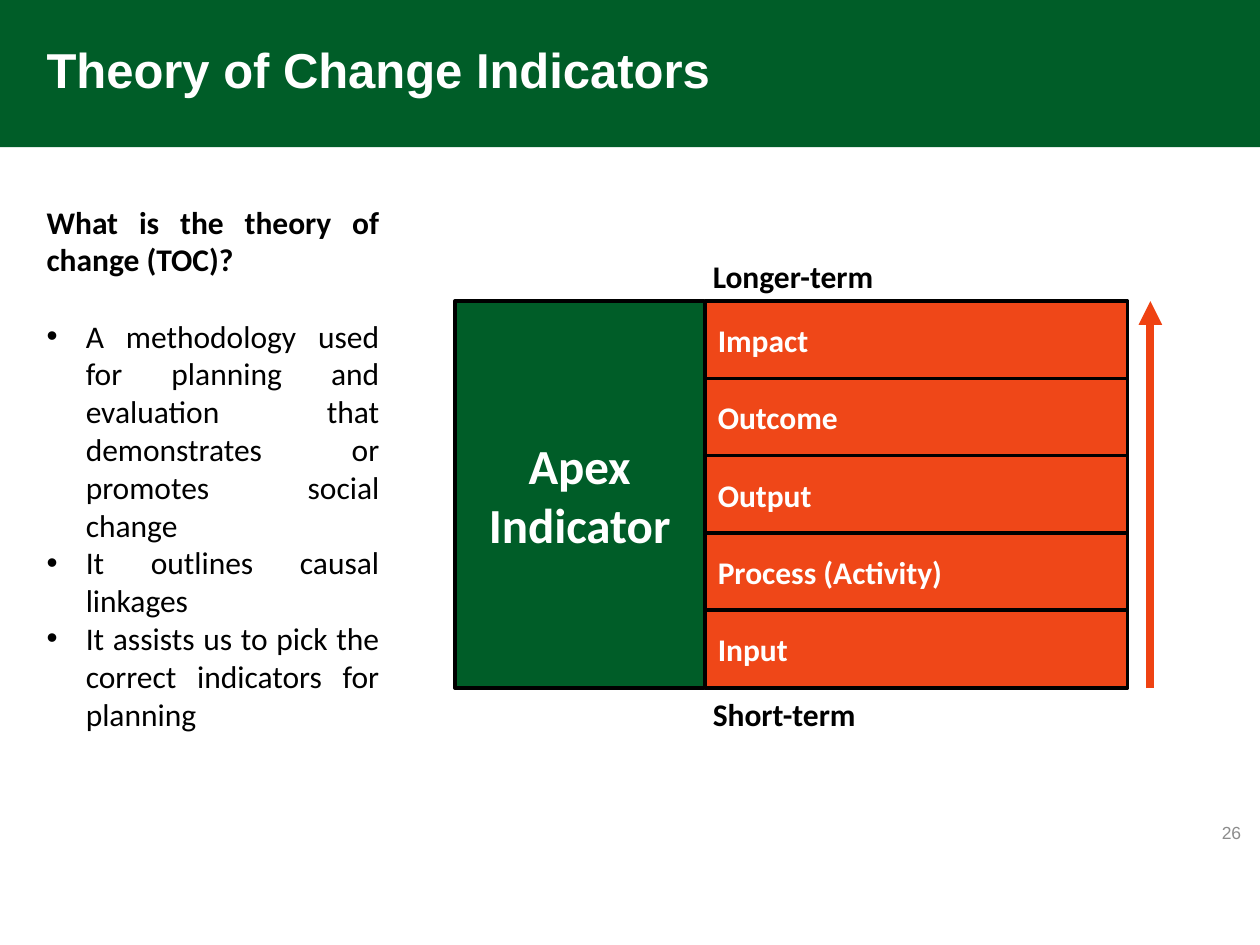
"""Build the Theory of Change Indicators slide."""
from dataclasses import dataclass

from lxml import etree
from pptx import Presentation
from pptx import util as u
from pptx.dml.color import RGBColor
from pptx.enum import shapes, text
from pptx.oxml import ns


@dataclass(frozen=True)
class Theme:
    green: str = "005D28"
    orange: str = "EF4718"
    arrow: str = "EF4212"
    white: str = "FFFFFF"
    black: str = "000000"
    gray: str = "8C8C8C"
    heading_font: str = "Arial"
    body_font: str = "Calibri"
    large: int = 28
    body: int = 18
    small: int = 10
    outline: float = 2
    arrow_width: float = 4.5


@dataclass(frozen=True)
class Box:
    left: float
    top: float
    width: float
    height: float

    def lengths(self) -> tuple:
        return tuple(u.Cm(value) for value in (self.left, self.top, self.width, self.height))


@dataclass(frozen=True)
class Style:
    size: int
    color: str
    bold: bool = True
    font: str = "Calibri"
    align: text.PP_ALIGN = text.PP_ALIGN.LEFT


THEME = Theme()
TITLE = Style(THEME.large, THEME.white, font=THEME.heading_font)
NUMBER = Style(THEME.small, THEME.gray, False, THEME.heading_font, text.PP_ALIGN.RIGHT)
APEX = Style(THEME.large, THEME.white, align=text.PP_ALIGN.CENTER)
LEVEL = Style(THEME.body, THEME.white)
TERM = Style(THEME.body, THEME.black)
QUESTION = Style(THEME.body, THEME.black, align=text.PP_ALIGN.JUSTIFY)
ANSWER = Style(THEME.body, THEME.black, False, align=text.PP_ALIGN.JUSTIFY)

LEVELS = ("Impact", "Outcome", "Output", "Process (Activity)", "Input")
ANSWERS = (
    "A methodology used for planning and evaluation that demonstrates or promotes social change",
    "It outlines causal linkages",
    "It assists us to pick the correct indicators for planning",
)
APEX_BOX = Box(9.17, 6.07, 5.03, 7.8)
LEVEL_LEFT, LEVEL_WIDTH, LEVEL_HEIGHT = 14.22, 8.51, 1.57
ARROW_LEFT = 23.19
BULLET_INDENT = u.Cm(0.79)


def add_run(paragraph, words: str, style: Style) -> None:
    paragraph.alignment = style.align
    run = paragraph.add_run()
    run.text = words
    run.font.name = style.font
    run.font.size = u.Pt(style.size)
    run.font.bold = style.bold
    run.font.color.rgb = RGBColor.from_string(style.color)


def add_bullet(paragraph) -> None:
    properties = paragraph._p.get_or_add_pPr()
    properties.set("marL", str(BULLET_INDENT))
    properties.set("indent", str(-BULLET_INDENT))
    etree.SubElement(properties, ns.qn("a:buFont")).set("typeface", THEME.heading_font)
    etree.SubElement(properties, ns.qn("a:buChar")).set("char", "•")


def add_label(slide, box: Box, words: str, style: Style, anchor=text.MSO_ANCHOR.TOP):
    frame = slide.shapes.add_textbox(*box.lengths()).text_frame
    frame.word_wrap = True
    frame.vertical_anchor = anchor
    add_run(frame.paragraphs[0], words, style)
    return frame


def add_block(slide, box: Box, fill: str, outlined: bool = True):
    shape = slide.shapes.add_shape(shapes.MSO_SHAPE.RECTANGLE, *box.lengths())
    shape.shadow.inherit = False
    shape.fill.solid()
    shape.fill.fore_color.rgb = RGBColor.from_string(fill)
    if outlined:
        shape.line.color.rgb = RGBColor.from_string(THEME.black)
        shape.line.width = u.Pt(THEME.outline)
    else:
        shape.line.fill.background()
    return shape


def add_text_block(slide, box: Box, fill: str, words: str, style: Style) -> None:
    frame = add_block(slide, box, fill).text_frame
    frame.word_wrap = True
    frame.vertical_anchor = text.MSO_ANCHOR.MIDDLE
    add_run(frame.paragraphs[0], words, style)


def add_up_arrow(slide, left: float, bottom: float, top: float) -> None:
    arrow = slide.shapes.add_connector(
        shapes.MSO_CONNECTOR.STRAIGHT, u.Cm(left), u.Cm(bottom), u.Cm(left), u.Cm(top)
    )
    arrow.line.color.rgb = RGBColor.from_string(THEME.arrow)
    arrow.line.width = u.Pt(THEME.arrow_width)
    etree.SubElement(arrow.line._get_or_add_ln(), ns.qn("a:tailEnd")).set("type", "triangle")
    etree.SubElement(arrow._element.spPr, ns.qn("a:effectLst"))


def add_explanation(slide) -> None:
    frame = add_label(
        slide, Box(0.69, 3.96, 7.21, 11.02), "What is the theory of change (TOC)?", QUESTION
    )
    for index, answer in enumerate(ANSWERS):
        paragraph = frame.add_paragraph()
        add_bullet(paragraph)
        paragraph.space_before = u.Pt(0 if index else 22)
        add_run(paragraph, answer, ANSWER)


def add_indicators(slide) -> None:
    add_text_block(slide, APEX_BOX, THEME.green, "Apex Indicator", APEX)
    pitch = (APEX_BOX.height - LEVEL_HEIGHT) / (len(LEVELS) - 1)
    for index, level in enumerate(LEVELS):
        box = Box(LEVEL_LEFT, APEX_BOX.top + index * pitch, LEVEL_WIDTH, LEVEL_HEIGHT)
        add_text_block(slide, box, THEME.orange, level, LEVEL)
    bottom = APEX_BOX.top + APEX_BOX.height
    add_up_arrow(slide, ARROW_LEFT, bottom, APEX_BOX.top)
    for term, top in (("Short-term", bottom + 0.02), ("Longer-term", APEX_BOX.top - 1.02)):
        add_label(slide, Box(14.12, top, 9.55, 1.02), term, TERM)


def main() -> None:
    presentation = Presentation()
    presentation.slide_width, presentation.slide_height = u.Cm(25.4), u.Cm(19.05)
    slide = presentation.slides.add_slide(presentation.slide_layouts[6])
    middle = text.MSO_ANCHOR.MIDDLE
    add_block(slide, Box(0, 0, 25.4, 2.97), THEME.green, outlined=False)
    add_label(slide, Box(0.69, 0.43, 21.39, 1.9), "Theory of Change Indicators", TITLE, middle)
    add_label(slide, Box(23.7, 16.38, 1.57, 0.81), "26", NUMBER, middle)
    add_explanation(slide)
    add_indicators(slide)
    presentation.save("out.pptx")


if __name__ == "__main__":
    main()
